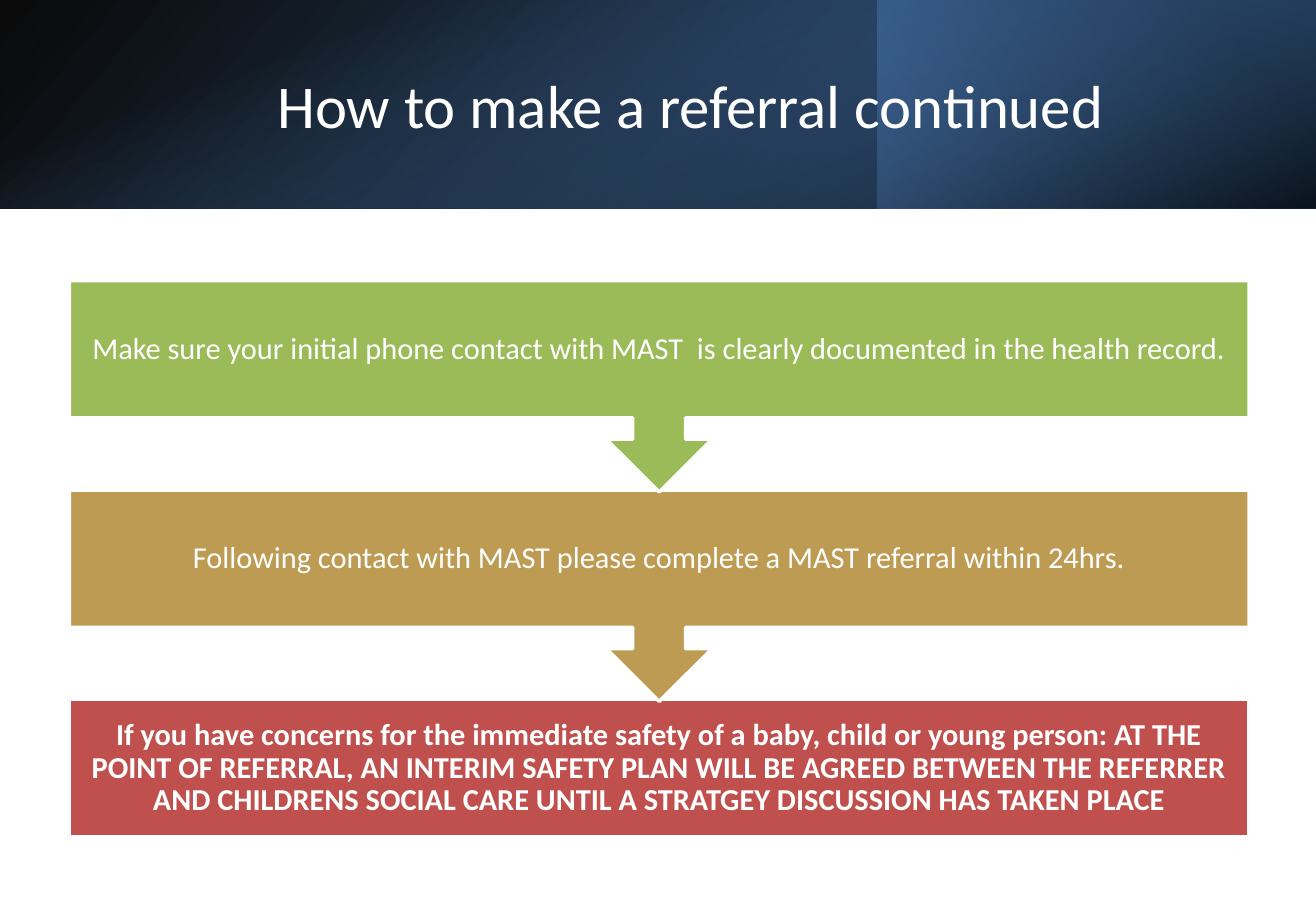
from pptx import Presentation
from pptx.dml.color import RGBColor
from pptx.enum.shapes import MSO_SHAPE
from pptx.enum.text import MSO_ANCHOR, PP_ALIGN
from pptx.oxml import parse_xml
from pptx.oxml.ns import nsdecls, qn
from pptx.util import Cm, Pt

COLORS = {
    "white": "FFFFFF",
    "black": "000000",
    "blue": "4F81BD",
    "mid_blue": "376092",
    "navy": "254061",
    "green": "9BBB59",
    "gold": "BD9B53",
    "red": "C0504D",
}
FONT = "Calibri"
SLIDE_WIDTH, SLIDE_HEIGHT = 27.51, 19.05
HEADER_HEIGHT = 4.37
STEPS = [
    ("Make sure your initial phone contact with MAST  is clearly documented in the health record.",
     "green", False),
    ("Following contact with MAST please complete a MAST referral within 24hrs.",
     "gold", False),
    ("If you have concerns for the immediate safety of a baby, child or young person: "
     "AT THE POINT OF REFERRAL, AN INTERIM SAFETY PLAN WILL BE AGREED BETWEEN THE REFERRER "
     "AND CHILDRENS SOCIAL CARE UNTIL A STRATGEY DISCUSSION HAS TAKEN PLACE",
     "red", True),
]


def rgb(name):
    return RGBColor.from_string(COLORS[name])


def add_block(slide, kind, left, top, width, height):
    shape = slide.shapes.add_shape(kind, Cm(left), Cm(top), Cm(width), Cm(height))
    shape.shadow.inherit = False
    return shape


def write_text(shape, text, size, bold=False, line_spacing=1.0):
    frame = shape.text_frame
    frame.word_wrap = True
    frame.vertical_anchor = MSO_ANCHOR.MIDDLE
    paragraph = frame.paragraphs[0]
    paragraph.alignment = PP_ALIGN.CENTER
    paragraph.line_spacing = line_spacing
    run = paragraph.add_run()
    run.text = text
    run.font.name = FONT
    run.font.size = Pt(size)
    run.font.bold = bold
    run.font.color.rgb = rgb("white")


def add_gradient(slide, left, top, width, height, stops, angle, rotation=0):
    shape = add_block(slide, MSO_SHAPE.RECTANGLE, left, top, width, height)
    shape.rotation = rotation
    shape.line.fill.background()
    shape.fill.gradient()
    shape.fill.gradient_angle = 360 - angle
    for stop, (position, color, _) in zip(shape.fill.gradient_stops, stops):
        stop.position = position / 100
        stop.color.rgb = rgb(color)
    stop_colors = shape._element.spPr.iter(qn("a:srgbClr"))
    for stop_color, (_, _, opacity) in zip(stop_colors, stops):
        stop_color.append(parse_xml(f'<a:alpha {nsdecls("a")} val="{opacity * 1000}"/>'))
    return shape


def add_header(slide, left, top, width, height, title):
    base = add_gradient(slide, left, top, width, height,
                        [(0, "black", 96), (100, "mid_blue", 100)], 140)
    base._element.spPr.find(qn("a:xfrm")).set("flipH", "1")
    add_gradient(slide, left + width * 2 / 3, top, width / 3, height,
                 [(19, "navy", 68), (100, "blue", 79)], 320, 180)
    offset = (width - height) / 2
    add_gradient(slide, left + offset, top - offset, height, width,
                 [(23, "blue", 0), (99, "black", 74)], 340, 90)
    title_box = slide.shapes.add_textbox(Cm(left + 3.1), Cm(top + 0.97), Cm(22.66), Cm(2.44))
    write_text(title_box, title, 36)


def add_process(slide, left, top, width, height, steps):
    box_height = 2.87
    pitch = (height - box_height) / (len(steps) - 1)
    callout_height = pitch + 0.04
    for index, (text, color, bold) in reversed(list(enumerate(steps))):
        is_last = index == len(steps) - 1
        kind = MSO_SHAPE.RECTANGLE if is_last else MSO_SHAPE.DOWN_ARROW_CALLOUT
        shape = add_block(slide, kind, left, top + index * pitch, width,
                          box_height if is_last else callout_height)
        if not is_last:
            shape.adjustments[3] = box_height / callout_height
        shape.fill.solid()
        shape.fill.fore_color.rgb = rgb(color)
        shape.line.color.rgb = rgb("white")
        shape.line.width = Pt(2)
        frame = shape.text_frame
        frame.margin_left = frame.margin_right = Cm(0.36)
        frame.margin_top = frame.margin_bottom = Cm(0.36)
        write_text(shape, text, 18, bold, 0.9)


def main():
    presentation = Presentation()
    presentation.slide_width = Cm(SLIDE_WIDTH)
    presentation.slide_height = Cm(SLIDE_HEIGHT)
    slide = presentation.slides.add_slide(presentation.slide_layouts[6])
    slide.background.fill.solid()
    slide.background.fill.fore_color.rgb = rgb("white")
    add_header(slide, 0, 0, SLIDE_WIDTH, HEADER_HEIGHT, "How to make a referral continued")
    add_process(slide, 1.45, 5.87, 24.66, 11.63, STEPS)
    presentation.save("out.pptx")


if __name__ == "__main__":
    main()
